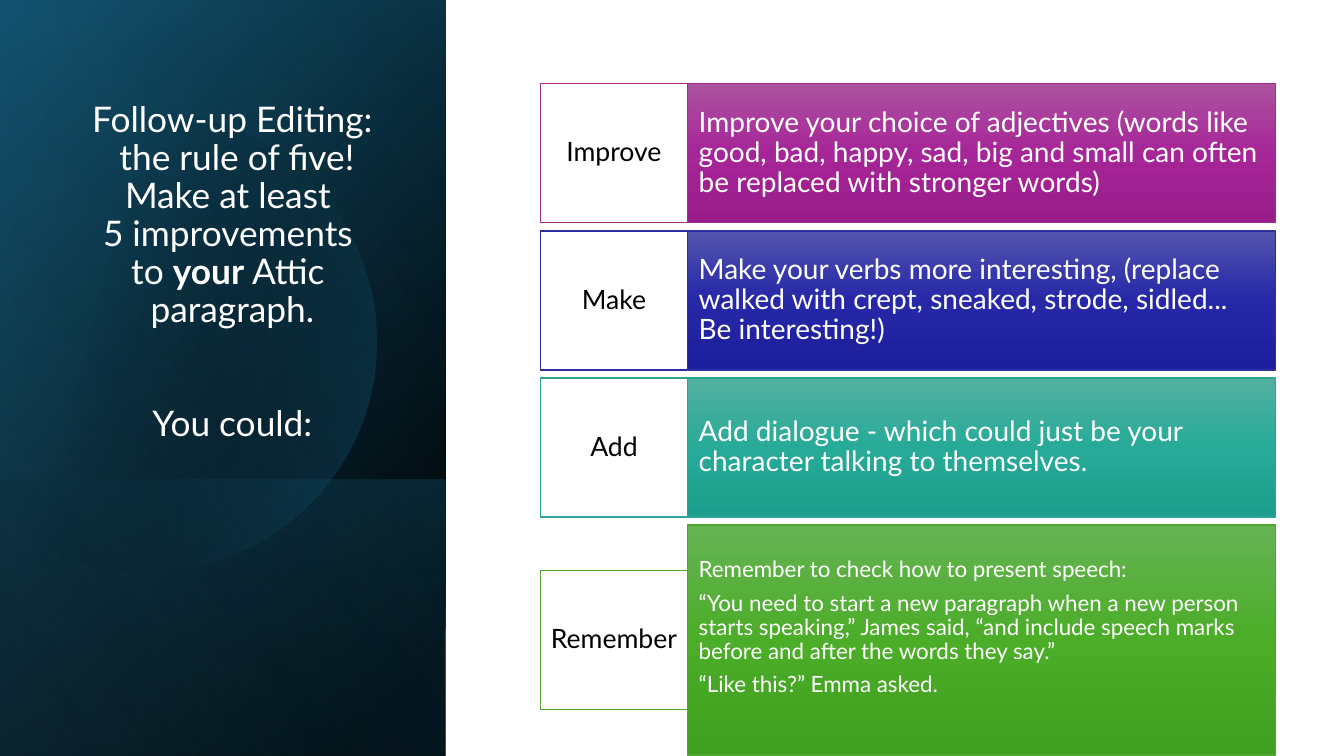
from copy import deepcopy
from math import cos, radians, sin

from pptx import Presentation
from pptx.dml.color import RGBColor
from pptx.enum.shapes import MSO_SHAPE as Kind
from pptx.enum.text import MSO_ANCHOR as Anchor, MSO_AUTO_SIZE as Fit, PP_ALIGN as Align
from pptx.oxml import parse_xml
from pptx.oxml.ns import nsdecls, qn
from pptx.util import Inches, Pt

FONT = "Lato"
WHITE, BLACK = "FFFFFF", "000000"


def paint(color, code):
    color.rgb = RGBColor.from_string(code)


def blend(shape, stops, angle):
    """Fill with a linear gradient; stops are (position %, colour, opacity %)."""
    marks = "".join(
        f'<a:gs pos="{pos * 1000}"><a:srgbClr val="{code}">'
        f'<a:alpha val="{alpha * 1000}"/></a:srgbClr></a:gs>'
        for pos, code, alpha in stops)
    grad = parse_xml(
        f'<a:gradFill {nsdecls("a")} rotWithShape="1"><a:gsLst>{marks}</a:gsLst>'
        f'<a:lin ang="{angle * 60000}" scaled="0"/></a:gradFill>')
    shape.fill.background()
    props = shape._element.spPr
    props.replace(props.find(qn("a:noFill")), grad)


class Deck:
    def __init__(self):
        self.show = Presentation()
        self.show.slide_width = Inches(13.33)
        self.show.slide_height = Inches(7.5)
        self.slide = self.show.slides.add_slide(self.show.slide_layouts[5])
        self.shapes = self.slide.shapes

    def rect(self, left, top, width, height):
        box = self.shapes.add_shape(
            Kind.RECTANGLE, *map(Inches, (left, top, width, height)))
        box.shadow.inherit = False
        return box

    def panel(self, left, top, width, height, stops, angle):
        """Add a borderless gradient, mirrored and turned upright."""
        box = self.rect(left, top, width, height)
        box.rotation = 90
        box._element.spPr.find(qn("a:xfrm")).set("flipH", "1")
        box.line.fill.background()
        blend(box, stops, angle)

    def disc(self, x, y, radius, cut, stops, angle):
        """Add a circle whose left side is cut off by a vertical edge."""
        arc = [(Inches(x + radius * cos(radians(a))), Inches(y + radius * sin(radians(a))))
               for a in range(-cut, cut + 1, 2)]
        pen = self.shapes.build_freeform(*arc[0], scale=1.0)
        pen.add_line_segments(arc[1:], close=True)
        shape = pen.convert_to_shape()
        shape.shadow.inherit = False
        shape.line.fill.background()
        blend(shape, stops, angle)

    def style(self, para, size, code, align):
        para.alignment = align
        para.line_spacing = 0.9
        for run in para.runs:
            run.font.size = Pt(size)
            run.font.name = FONT
            paint(run.font.color, code)
        for gap in para._p.findall(qn("a:br")):
            gap.insert(0, deepcopy(para.runs[0]._r.rPr))

    def title(self, place, lead, strong, lines, size):
        head = self.shapes.title
        head.left, head.top, head.width, head.height = map(Inches, place)
        self.shapes._spTree.append(head._element)
        frame = head.text_frame
        frame.auto_size = Fit.NONE
        frame.vertical_anchor = Anchor.BOTTOM
        para = frame.paragraphs[0]
        para.text = lead
        bold = para.add_run()
        bold.text = strong
        bold.font.bold = True
        for line in lines:
            if line:
                para.add_run().text = line
            para.add_line_break()
        self.style(para, size, WHITE, Align.CENTER)

    def label(self, box, text, size, code, align, inset):
        frame = box.text_frame
        frame.word_wrap = True
        frame.vertical_anchor = Anchor.MIDDLE
        frame.margin_left = frame.margin_right = Inches(inset[0])
        frame.margin_top = frame.margin_bottom = Inches(inset[1])
        frame.text = text
        for para in frame.paragraphs:
            self.style(para, size, code, align)
            para.space_after = Pt(6.4)

    def row(self, top, height, name, text, size, edge, shades):
        bar = self.rect(6.82, top, 5.83, height)
        blend(bar, [(pos, code, 100) for pos, code in zip((0, 50, 100), shades)], 90)
        self.label(bar, text, size, WHITE, Align.LEFT, (0.11, 0.35))
        tag = self.rect(5.36, top + (height - 1.38) / 2, 1.46, 1.38)
        tag.fill.solid()
        paint(tag.fill.fore_color, WHITE)
        self.label(tag, name, 19, BLACK, Align.CENTER, (0.08, 0.14))
        for box in (bar, tag):
            paint(box.line.color, edge)
            box.line.width = Pt(1)


ROWS = [
    ("Improve",
     "Improve your choice of adjectives (words like good, bad, happy, sad, big and small "
     "can often be replaced with stronger words)",
     1.38, 20, "A02B93", ("AC53A0", "A62598", "991C8B")),
    ("Make",
     "Make your verbs more interesting, (replace walked with crept, sneaked, strode, "
     "sidled... Be interesting!)",
     1.38, 20, "2C2EA2", ("5354AE", "2628A8", "1D1E9B")),
    ("Add",
     "Add dialogue - which could just be your character talking to themselves.",
     1.38, 20, "2DA594", ("53B0A1", "27AB98", "1D9D8B")),
    ("Remember",
     "Remember to check how to present speech:\n"
     "“You need to start a new paragraph when a new person starts speaking,” James said, "
     "“and include speech marks before and after the words they say.”\n"
     "“Like this?” Emma asked. \v",
     2.28, 16, "4EA72E", ("66B354", "4BAD28", "409F1E")),
]


def main():
    deck = Deck()
    side = (-1.54, 1.54, 7.5, 4.42)
    deck.panel(*side, [(8, BLACK, 100), (100, "104862", 100)], 50)
    deck.panel(*side, [(0, BLACK, 0), (99, "156082", 46)], 30)
    deck.panel(0.84, 3.92, 2.74, 4.42, [(2, "156082", 29), (100, BLACK, 30)], 130)
    deck.disc(1.45, 3.39, 2.28, 129, [(29, BLACK, 0), (100, "156082", 43)], 14)
    deck.panel(*side, [(0, BLACK, 0), (99, "46B1E1", 11)], 120)
    deck.title((0.64, 1.84, 3.33, 3.04),
               "Follow-up Editing:\v the rule of five!\vMake at least \v5 improvements \vto ",
               "your", [" Attic ", "paragraph.", "", "", "You could:"], 25.2)
    for i, (name, text, height, size, edge, shades) in enumerate(ROWS):
        deck.row(0.83 + 1.46 * i, height, name, text, size, edge, shades)
    deck.show.save("out.pptx")


if __name__ == "__main__":
    main()
